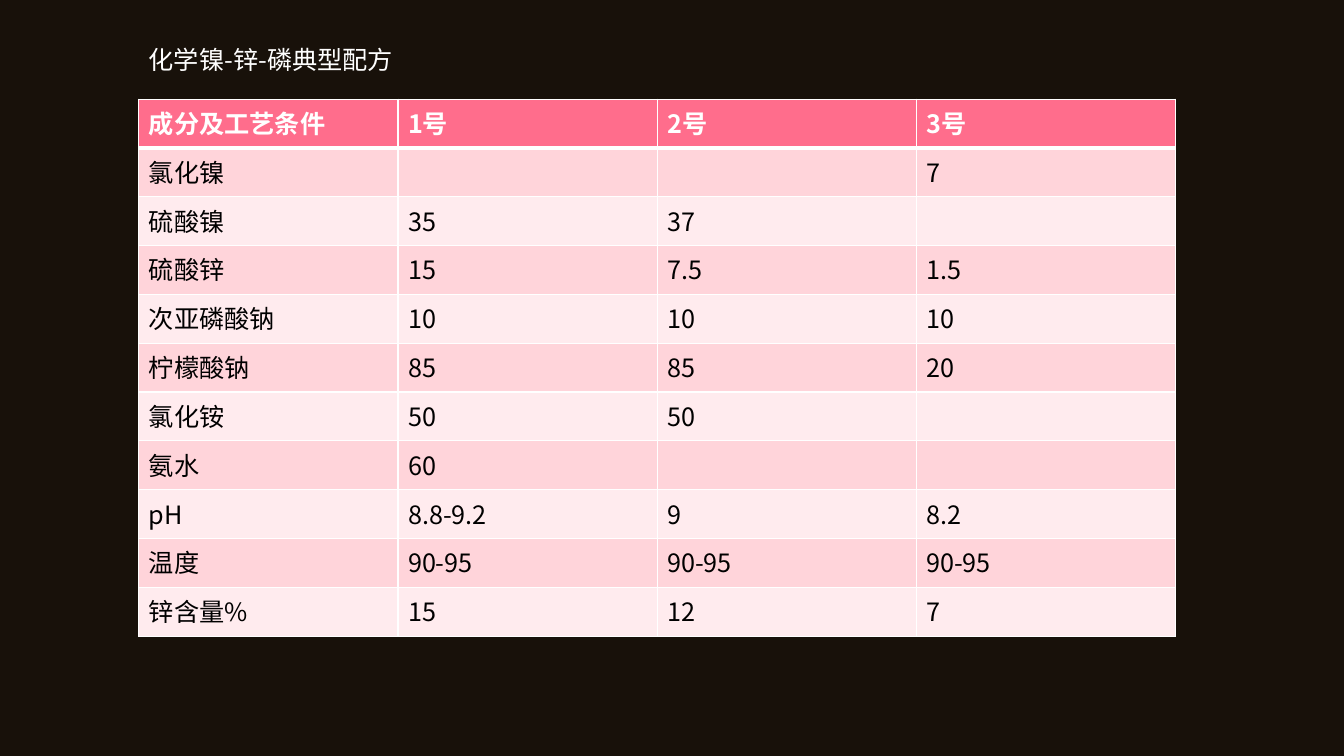
from lxml import etree
from pptx import Presentation
from pptx.dml.color import RGBColor
from pptx.enum.text import MSO_AUTO_SIZE
from pptx.oxml.ns import qn
from pptx.util import Cm, Pt

FIT_SHAPE = MSO_AUTO_SIZE.SHAPE_TO_FIT_TEXT
FONT = "Noto Sans CJK SC"
BACKGROUND = RGBColor(0x18, 0x11, 0x0A)
WHITE = RGBColor(0xFF, 0xFF, 0xFF)
BLACK = RGBColor(0x00, 0x00, 0x00)
HEADER_PINK = RGBColor(0xFF, 0x6D, 0x8C)
BAND_PINKS = (RGBColor(0xFF, 0xEB, 0xEE), RGBColor(0xFF, 0xD4, 0xDA))

LEFT = Cm(3.5)
COLUMN_WIDTH = Cm(6.53)
ROW_HEIGHT = Cm(1.23)
THIN = Pt(1)
THICK = Pt(3)

TITLE = "化学镍-锌-磷典型配方"
RECIPES = [
    ("成分及工艺条件", "1号", "2号", "3号"),
    ("氯化镍", "", "", "7"),
    ("硫酸镍", "35", "37", ""),
    ("硫酸锌", "15", "7.5", "1.5"),
    ("次亚磷酸钠", "10", "10", "10"),
    ("柠檬酸钠", "85", "85", "20"),
    ("氯化铵", "50", "50", ""),
    ("氨水", "60", "", ""),
    ("pH", "8.8-9.2", "9", "8.2"),
    ("温度", "90-95", "90-95", "90-95"),
    ("锌含量%", "15", "12", "7"),
]


def add_span(para, text, color, bold=False):
    span = para.add_run()
    span.text = text
    span.font.size = Pt(18)
    span.font.bold = bold
    span.font.color.rgb = color
    span.font.name = FONT
    properties = span._r.get_or_add_rPr()
    etree.SubElement(properties, qn("a:ea"), typeface=FONT)


def add_title(page):
    box = page.shapes.add_textbox(LEFT, Cm(1), Cm(11.28), Cm(1.02))
    frame = box.text_frame
    frame.word_wrap = True
    frame.auto_size = FIT_SHAPE
    add_span(frame.paragraphs[0], TITLE, WHITE)


def set_borders(cell, top, bottom):
    properties = cell._tc.get_or_add_tcPr()
    widths = {"a:lnL": THIN, "a:lnR": THIN, "a:lnT": top, "a:lnB": bottom}
    for tag, width in widths.items():
        line = etree.SubElement(properties, qn(tag), w=str(width))
        fill = etree.SubElement(line, qn("a:solidFill"))
        etree.SubElement(fill, qn("a:srgbClr"), val=str(WHITE))


def fill_cell(cell, text, row):
    header = row == 0
    set_borders(cell, THICK if row == 1 else THIN, THICK if header else THIN)
    cell.fill.solid()
    cell.fill.fore_color.rgb = HEADER_PINK if header else BAND_PINKS[row % 2]
    if text:
        color = WHITE if header else BLACK
        add_span(cell.text_frame.paragraphs[0], text, color, header)


def add_recipe_table(page):
    rows, columns = len(RECIPES), len(RECIPES[0])
    table = page.shapes.add_table(
        rows, columns, LEFT, Cm(2.5), COLUMN_WIDTH * columns, ROW_HEIGHT * rows
    ).table
    for column in table.columns:
        column.width = COLUMN_WIDTH
    for row, values in enumerate(RECIPES):
        table.rows[row].height = ROW_HEIGHT
        for column, text in enumerate(values):
            fill_cell(table.cell(row, column), text, row)


def main():
    deck = Presentation()
    deck.slide_width = Cm(33.87)
    deck.slide_height = Cm(19.05)
    page = deck.slides.add_slide(deck.slide_layouts[6])
    page.background.fill.solid()
    page.background.fill.fore_color.rgb = BACKGROUND
    add_recipe_table(page)
    add_title(page)
    deck.save("out.pptx")


if __name__ == "__main__":
    main()
